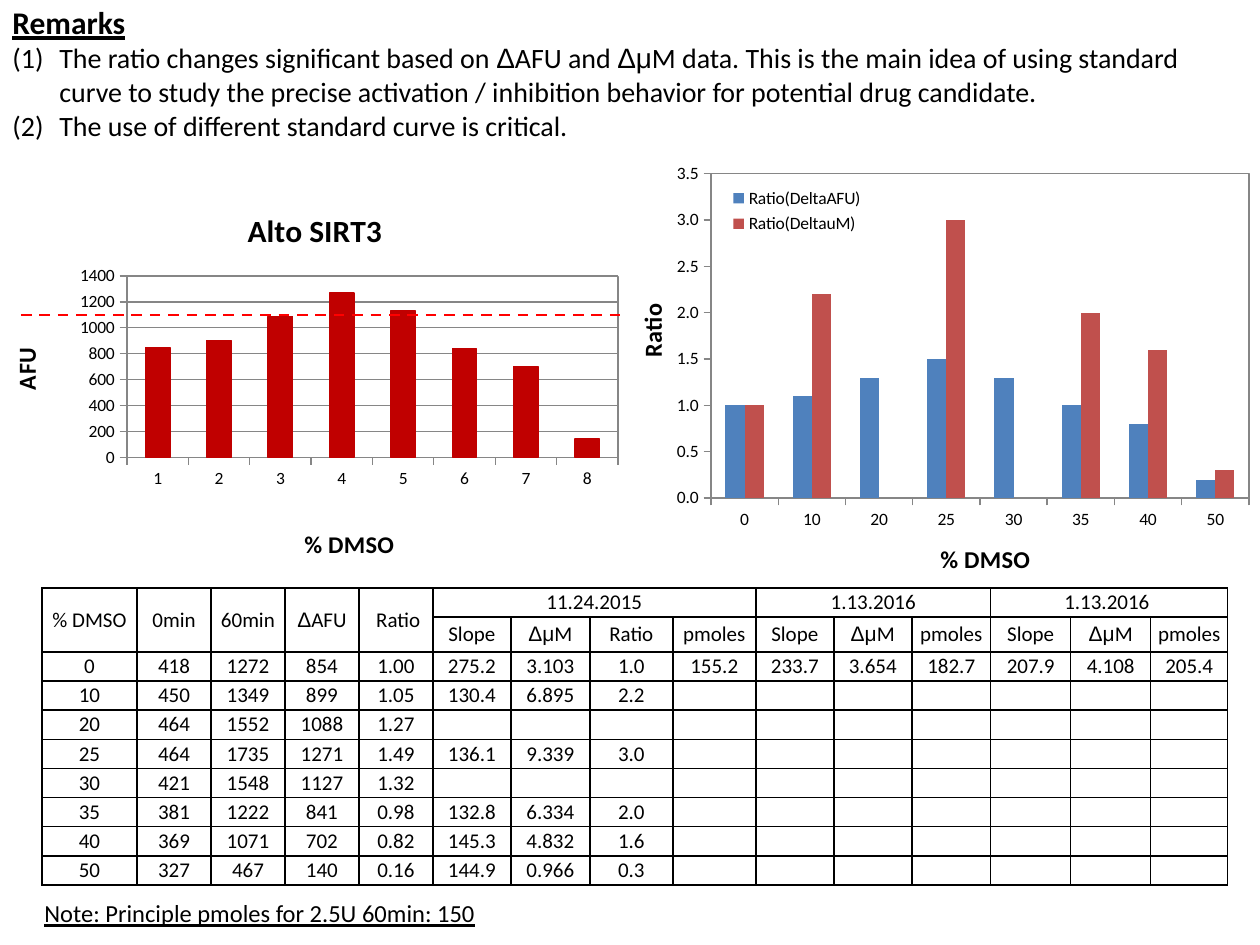
from itertools import groupby

from lxml.etree import SubElement
from pptx import Presentation
from pptx.chart.data import CategoryChartData
from pptx.dml.color import RGBColor
from pptx.enum.chart import XL_CHART_TYPE, XL_LEGEND_POSITION, XL_TICK_MARK
from pptx.enum.dml import MSO_LINE
from pptx.enum.shapes import MSO_CONNECTOR
from pptx.enum.text import MSO_ANCHOR, MSO_AUTO_SIZE, PP_ALIGN
from pptx.oxml import parse_xml
from pptx.oxml.ns import nsdecls, qn
from pptx.util import Emu, Pt

COLORS = {"black": "000000", "gray": "868686", "dark red": "C00000",
          "red": "FF0000", "blue": "4F81BD", "brick": "C0504D"}
FONT, GREEK_FONT = "Calibri", "Arial"
REMARKS = [
    "The ratio changes significant based on ΔAFU and ΔμM data. This is the main idea of using "
    "standard curve to study the precise activation / inhibition behavior for potential drug candidate.",
    "The use of different standard curve is critical.",
]
ROW_HEADERS = ["% DMSO", "0min", "60min", "ΔAFU", " Ratio"]
GROUPS = [("11.24.2015", ["Slope", "ΔμM", "Ratio", "pmoles"]),
          ("1.13.2016", ["Slope", "ΔμM", "pmoles"]),
          ("1.13.2016 ", ["Slope", "ΔμM", "pmoles"])]
MEASUREMENTS = [
    ["0", "418", "1272", "854", "1.00", "275.2", "3.103", "1.0", "155.2",
     "233.7", "3.654", "182.7", "207.9", "4.108", "205.4"],
    ["10", "450", "1349", "899", "1.05", "130.4", "6.895", "2.2"],
    ["20", "464", "1552", "1088", "1.27"],
    ["25", "464", "1735", "1271", "1.49", "136.1", "9.339", "3.0"],
    ["30", "421", "1548", "1127", "1.32"],
    ["35", "381", "1222", "841", "0.98", "132.8", "6.334", "2.0"],
    ["40", "369", "1071", "702", "0.82", "145.3", "4.832", "1.6"],
    ["50", "327", "467", "140", "0.16", "144.9", "0.966", "0.3"],
]
COLUMN_WIDTHS = [95, 74, 74, 74, 74, 78, 79, 83, 83, 78, 78, 79, 80, 80, 77]
HEADER_HEIGHTS, BODY_HEIGHT = [29, 35], 233


def px(length):
    return Emu(round(length * 914400 / 126))


def color(name):
    return RGBColor.from_string(COLORS[name])


def style_font(font, size, bold=False, name=FONT):
    font.size, font.bold, font.name = Pt(size), bold, name
    font.color.rgb = color("black")


def add_runs(paragraph, text, size, bold=False, underline=False):
    """Add text with its Greek letters in runs of their own font."""
    for greek, letters in groupby(text, lambda letter: letter in "Δμ"):
        run = paragraph.add_run()
        run.text = "".join(letters)
        style_font(run.font, size, bold, GREEK_FONT if greek else FONT)
        run.font.underline = underline


def add_text_box(slide, box, wrap):
    frame = slide.shapes.add_textbox(*map(px, box)).text_frame
    frame.word_wrap = wrap
    frame.auto_size = MSO_AUTO_SIZE.SHAPE_TO_FIT_TEXT
    return frame


def add_remarks(slide, box):
    frame = add_text_box(slide, box, True)
    add_runs(frame.paragraphs[0], "Remarks", 18, bold=True, underline=True)
    for remark in REMARKS:
        paragraph = frame.add_paragraph()
        properties = paragraph._p.get_or_add_pPr()
        properties.set("marL", str(px(47)))
        properties.set("indent", str(-px(47)))
        SubElement(properties, qn("a:buFont")).set("typeface", FONT)
        SubElement(properties, qn("a:buAutoNum")).set("type", "arabicParenBoth")
        add_runs(paragraph, remark, 16)


def set_layout(element, box, area, inner=False, sized=True):
    """Place a chart part at a px box, as fractions of the chart's box."""
    layout = element.find(qn("c:layout"))
    if layout is None:
        layout = parse_xml(f"<c:layout {nsdecls('c')}/>")
        element.insert(1, layout)
    manual = SubElement(layout, qn("c:manualLayout"))
    settings = [("layoutTarget", "inner")] if inner else []
    settings += [("xMode", "edge"), ("yMode", "edge")]
    names = ["x", "y", "w", "h"] if sized else ["x", "y"]
    settings += [(name, str(round(length / area[2 + index % 2], 4)))
                 for index, (name, length) in enumerate(zip(names, box))]
    for name, value in settings:
        SubElement(manual, qn(f"c:{name}")).set("val", value)


def add_title(owner, text, size, position, area):
    """Title a chart or an axis at a px position within the chart."""
    owner.has_title = True
    title = owner.chart_title if hasattr(owner, "chart_title") else owner.axis_title
    add_runs(title.text_frame.paragraphs[0], text, size, bold=True)
    set_layout(title._element, position, area, sized=False)


def add_column_chart(slide, box, categories, series, plot_box, scale, number_format):
    """Add a column chart; series holds (name, values, color), scale (maximum, step)."""
    data = CategoryChartData()
    data.categories = categories
    for name, values, _ in series:
        data.add_series(name, values)
    chart = slide.shapes.add_chart(XL_CHART_TYPE.COLUMN_CLUSTERED, *map(px, box), data).chart
    style_font(chart.font, 10)
    chart.has_legend = chart.has_title = False
    plot = chart.plots[0]
    plot.gap_width, plot.overlap, plot.vary_by_categories = 150, 0, False
    for drawn, (_, _, fill) in zip(plot.series, series):
        drawn.format.fill.solid()
        drawn.format.fill.fore_color.rgb = color(fill)
        drawn.invert_if_negative = False
    for axis in (chart.category_axis, chart.value_axis):
        axis.major_tick_mark = XL_TICK_MARK.OUTSIDE
        axis.minor_tick_mark = XL_TICK_MARK.NONE
        axis.format.line.color.rgb = color("gray")
        axis.has_major_gridlines = False
    value_axis = chart.value_axis
    value_axis.minimum_scale = 0
    value_axis.maximum_scale, value_axis.major_unit = scale
    value_axis.tick_labels.number_format = number_format
    value_axis.tick_labels.number_format_is_linked = False
    plot_area = chart._chartSpace.chart.plotArea
    if plot_area.find(qn("c:layout")) is None:
        plot_area.insert(0, parse_xml(f"<c:layout {nsdecls('c')}/>"))
    set_layout(plot_area, plot_box, box, inner=True)
    plot_area.append(parse_xml(
        f'<c:spPr {nsdecls("c", "a")}><a:noFill/><a:ln w="9525"><a:solidFill>'
        f'<a:srgbClr val="{COLORS["gray"]}"/></a:solidFill></a:ln></c:spPr>'))
    return chart


def add_activity_chart(slide, box):
    values = [round(int(row[3]), -1) for row in MEASUREMENTS]
    categories = [str(number + 1) for number in range(len(values))]
    name = "Alto SIRT3"
    chart = add_column_chart(slide, box, categories, [(name, values, "dark red")],
                             (127, 89, 491, 185), (1400, 200), "General")
    line = chart.plots[0].series[0].format.line
    line.color.rgb, line.width = color("dark red"), Pt(0.75)
    chart.value_axis.has_major_gridlines = True
    chart.value_axis.major_gridlines.format.line.color.rgb = color("gray")
    add_title(chart, name, 18, (242, 15), box)
    add_title(chart.category_axis, "% DMSO", 14, (300, 341), box)
    add_title(chart.value_axis, "AFU", 14, (5, 158), box)

    threshold = slide.shapes.add_connector(
        MSO_CONNECTOR.STRAIGHT, px(box[0] + 21), px(box[1] + 126), px(box[0] + 620), px(box[1] + 126))
    threshold.line.color.rgb, threshold.line.width = color("red"), Pt(1.5)
    threshold.line.dash_style = MSO_LINE.DASH
    SubElement(threshold._element.spPr, qn("a:effectLst"))


def add_ratio_chart(slide, box):
    categories = [row[0] for row in MEASUREMENTS]
    afu_ratios = [round(float(row[4]), 1) for row in MEASUREMENTS]
    um_ratios = [float(row[7]) if len(row) > 7 else None for row in MEASUREMENTS]
    series = [("Ratio(DeltaAFU)", afu_ratios, "blue"), ("Ratio(DeltauM)", um_ratios, "brick")]
    chart = add_column_chart(slide, box, categories, series, (81, 23, 538, 329), (3.5, 0.5), "0.0")
    add_title(chart.category_axis, "% DMSO", 14, (306, 392), box)
    add_title(chart.value_axis, "Ratio", 14, (1, 151), box)
    chart.has_legend = True
    chart.legend.position = XL_LEGEND_POSITION.RIGHT
    chart.legend.include_in_layout = False
    style_font(chart.legend.font, 10)
    set_layout(chart.legend._element, (92, 32, 150, 58), box)


def fill_cell(cell, text):
    cell.margin_left = cell.margin_right = cell.margin_top = cell.margin_bottom = 0
    cell.vertical_anchor = MSO_ANCHOR.MIDDLE
    paragraph = cell.text_frame.paragraphs[0]
    paragraph.alignment = PP_ALIGN.CENTER
    add_runs(paragraph, text, 12)
    SubElement(paragraph._p, qn("a:endParaRPr")).set("sz", "1200")
    for side in ("lnL", "lnR", "lnT", "lnB"):
        border = SubElement(cell._tc.get_or_add_tcPr(), qn(f"a:{side}"), w=str(Pt(1)))
        SubElement(SubElement(border, qn("a:solidFill")), qn("a:srgbClr")).set("val", COLORS["black"])
    cell.fill.background()


def add_measurement_table(slide, left, top):
    row_count = len(MEASUREMENTS)
    heights = HEADER_HEIGHTS + [BODY_HEIGHT / row_count] * row_count
    table = slide.shapes.add_table(len(heights), len(COLUMN_WIDTHS), px(left), px(top),
                                   px(sum(COLUMN_WIDTHS)), px(sum(heights))).table
    table.first_row = table.horz_banding = False
    for column, width in zip(table.columns, COLUMN_WIDTHS):
        column.width = px(width)
    for row, height in zip(table.rows, heights):
        row.height = px(height)

    top_header, sub_header = list(ROW_HEADERS), [""] * len(ROW_HEADERS)
    for column in range(len(ROW_HEADERS)):
        table.cell(0, column).merge(table.cell(1, column))
    for date, names in GROUPS:
        start = len(top_header)
        table.cell(0, start).merge(table.cell(0, start + len(names) - 1))
        top_header += [date] + [""] * (len(names) - 1)
        sub_header += names
    for row, texts in enumerate([top_header, sub_header] + MEASUREMENTS):
        for column in range(len(COLUMN_WIDTHS)):
            fill_cell(table.cell(row, column), texts[column] if column < len(texts) else "")


def add_note(slide, box):
    frame = add_text_box(slide, box, False)
    add_runs(frame.paragraphs[0], "Note: Principle pmoles for 2.5U 60min: 150", 14, underline=True)


def main():
    presentation = Presentation()
    presentation.slide_width, presentation.slide_height = px(1260), px(945)
    slide = presentation.slides.add_slide(presentation.slide_layouts[6])
    add_remarks(slide, (0, -3, 1239, 152))
    add_activity_chart(slide, (0, 189, 630, 378))
    add_ratio_chart(slide, (630, 151, 630, 431))
    add_measurement_table(slide, 42, 588)
    add_note(slide, (32, 892, 460, 43))
    presentation.save("out.pptx")


if __name__ == "__main__":
    main()
